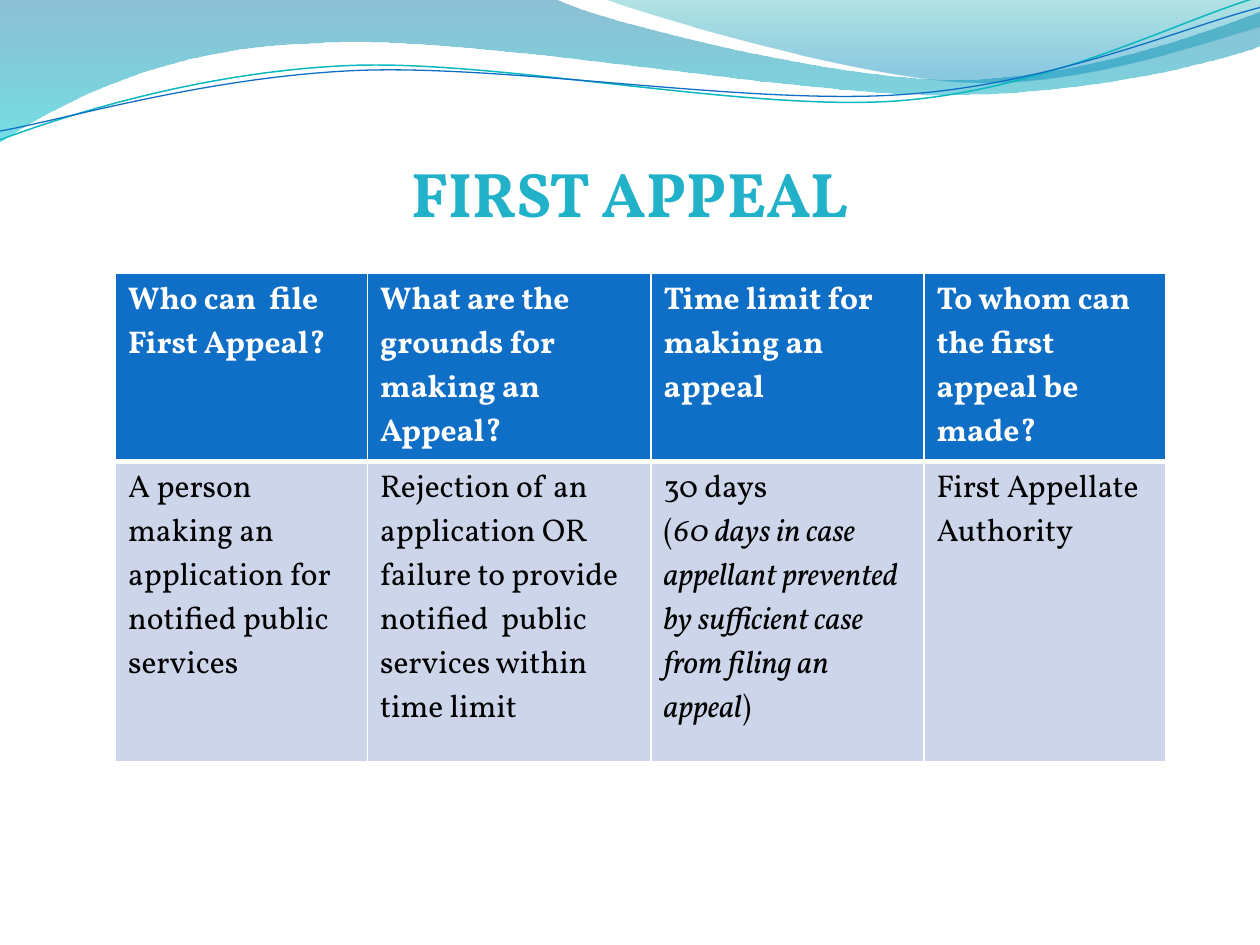
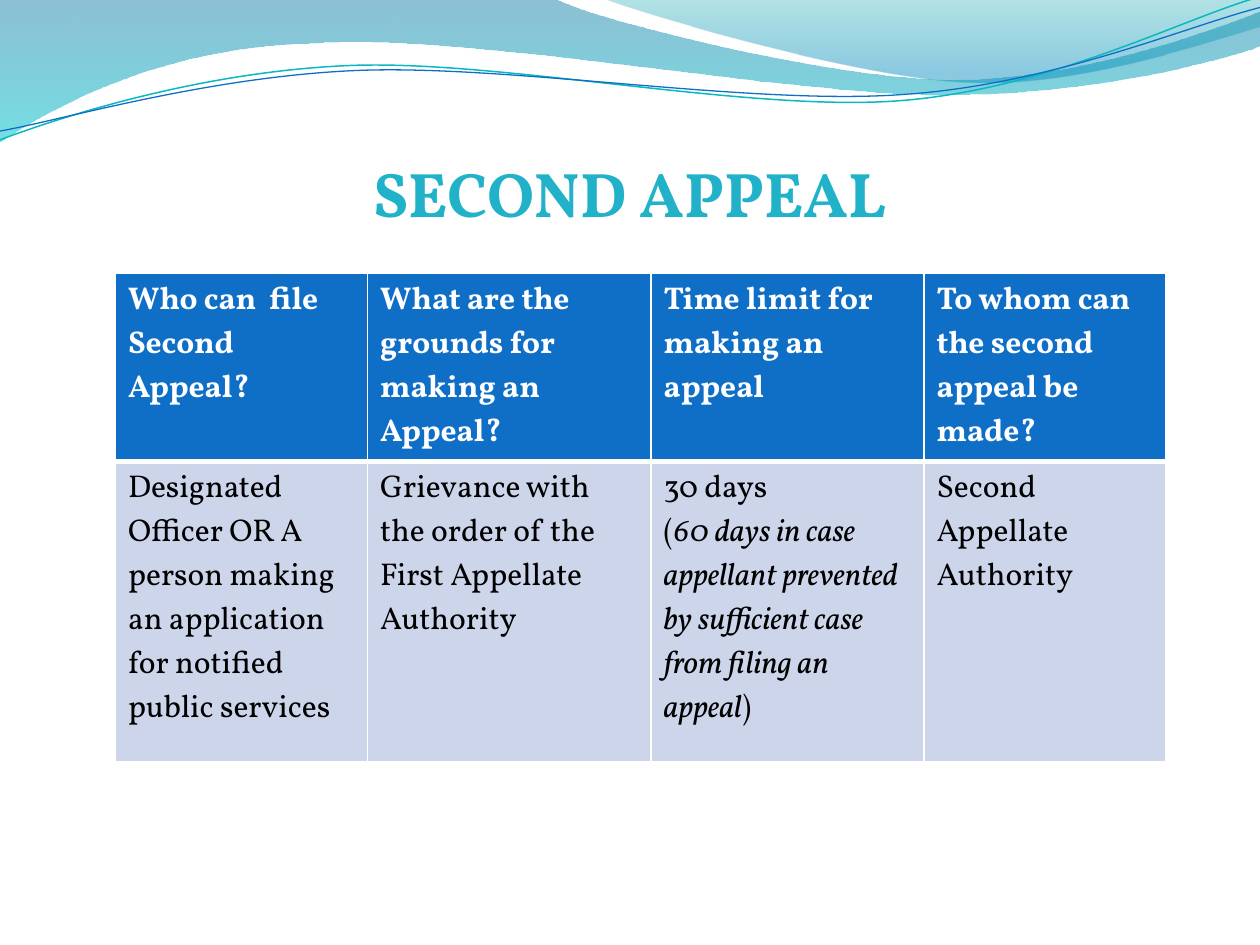
from math import cos, radians, sin

from lxml import etree
from pptx import Presentation
from pptx.dml.color import RGBColor
from pptx.enum.text import MSO_ANCHOR, MSO_AUTO_SIZE, PP_ALIGN
from pptx.oxml.ns import qn
from pptx.util import Inches, Pt

CENTER = PP_ALIGN.CENTER
BOTTOM = MSO_ANCHOR.BOTTOM
NO_AUTOFIT = MSO_AUTO_SIZE.NONE
TITLE_ONLY = 5
FONT = "Vollkorn"
COLORS = {
    "white": "FFFFFF", "black": "000000", "title": "21B2C9",
    "header": "0F6FC6", "body": "CCD5EA", "teal_line": "0AB8BF",
    "deep_blue": "0074A1", "aqua": "00C6CF", "green": "00A1A9", "sky": "008BBF",
}

PAGE_COLUMNS = 120
TITLE_BOX = (6, 9.2, 108, 12.75)
TABLE_BOX = (11, 26, 100, 46)
TABLE_COLUMNS = (24, 27, 26, 23)
TABLE_ROWS = (17.4, 28.6)

CURVE_TILT = 2.7
WIDE_BAND = [
    (0, 0), (4.4, -0.01), (4.76, 0.17, 6.64, 0.63, 7.58, 0.63),
    (8.53, 0.63, 9.58, 0.26, 10, 0.09), (10.01, 0.36),
    (9.83, 0.44, 8.7, 0.76, 7.46, 0.75), (6.22, 0.75, 3.82, 0.28, 2.57, 0.34),
    (1.29, 0.36, 0.46, 0.83, -0.01, 1.13),
]
RIGHT_BAND = [
    (4.79, -0.01), (5.09, 0.11, 6.82, 0.62, 7.69, 0.65),
    (8.56, 0.69, 9.61, 0.32, 10, 0.21), (10, 0),
]
TEAL_CURVE = [
    (0, 1.11), (0.48, 0.93, 1.58, 0.57, 2.77, 0.52),
    (3.95, 0.47, 5.93, 0.89, 7.13, 0.8), (8.33, 0.71, 9.38, 0.15, 9.98, -0.02),
]
BLUE_CURVE = [
    (0, 1.04), (0.47, 0.96, 1.64, 0.61, 2.83, 0.56),
    (4.03, 0.51, 5.97, 0.84, 7.17, 0.75), (8.36, 0.67, 9.41, 0.21, 10, 0.06),
]

TIME_LIMIT = [
    [("30 days", False)],
    [("(", False),
     ("60 days in case appellant prevented by sufficient case from filing an appeal", True),
     (")", False)],
]
APPEALS = [
    ("First", "A person making an application for notified public services",
     "Rejection of an application OR  failure to provide notified  public services "
     "within time limit"),
    ("Second",
     "Designated Officer OR A person making an application for notified public services",
     "Grievance with the order of the First Appellate Authority"),
]


def color(name):
    """Return the named colour as an RGB value."""
    return RGBColor.from_string(COLORS[name])


def write(para, text, size=18, fill="black", bold=False, italic=False):
    """Add a formatted span of text to a paragraph."""
    span = para.add_run()
    span.text = text
    font = span.font
    font.name, font.size, font.bold, font.italic = FONT, Pt(size), bold, italic
    font.color.rgb = color(fill)


def turn(point, center, degrees):
    """Turn a point clockwise around a centre."""
    angle = radians(degrees)
    x, y = point[0] - center[0], point[1] - center[1]
    return (center[0] + x * cos(angle) - y * sin(angle),
            center[1] + x * sin(angle) + y * cos(angle))


def bend(shape, outline):
    """Merge the lines that stand for a curve's control points into cubic curves."""
    lines = iter(list(shape.element.iter(qn("a:lnTo"))))
    for segment in outline[1:]:
        group = [next(lines) for _ in range(len(segment) // 2)]
        if len(group) == 3:
            curve = etree.Element(qn("a:cubicBezTo"))
            group[0].addprevious(curve)
            for line in group:
                curve.append(line[0])
                line.getparent().remove(line)


def draw_outline(page, width, outline, close, tilt=0, center=(0, 0)):
    """Draw an outline whose coordinates are tenths of the width."""
    points = [segment[i:i + 2] for segment in outline for i in range(0, len(segment), 2)]
    scaled = [tuple(round(value * width / 10) for value in turn(point, center, tilt))
              for point in points]
    builder = page.shapes.build_freeform(*scaled[0])
    builder.add_line_segments(scaled[1:], close=close)
    shape = builder.convert_to_shape()
    bend(shape, outline)
    shape.rotation = -tilt
    shape.shadow.inherit = False
    return shape


def draw_band(page, width, outline, stops):
    """Draw a translucent band with a vertical gradient."""
    band = draw_outline(page, width, outline, True)
    band.line.fill.background()
    band.fill.gradient()
    band.fill.gradient_angle = 270
    for stop, (position, name, _) in zip(band.fill.gradient_stops, stops):
        stop.position = position
        stop.color.rgb = color(name)
    for tint, (_, _, opacity) in zip(band.element.iter(qn("a:srgbClr")), stops):
        etree.SubElement(tint, qn("a:alpha")).set("val", str(opacity * 1000))
    return band


def draw_curve(page, width, outline, name, weight, center):
    """Draw a thin open curve, tilted around its centre."""
    curve = draw_outline(page, width, outline, False, CURVE_TILT, center)
    curve.fill.background()
    curve.line.color.rgb = color(name)
    curve.line.width = Pt(weight)
    return curve


def add_waves(page, width):
    """Draw the wave header once and move it to the layout shared by the slides."""
    waves = [
        draw_band(page, width, WIDE_BAND, [(0, "deep_blue", 45), (1, "aqua", 55)]),
        draw_band(page, width, RIGHT_BAND, [(0, "green", 30), (0.8, "sky", 45)]),
        draw_curve(page, width, TEAL_CURVE, "teal_line", 0.85, (4.99, 0.57)),
        draw_curve(page, width, BLUE_CURVE, "header", 0.75, (5, 0.59)),
    ]
    for number, wave in enumerate(waves):
        wave.element.nvSpPr.cNvPr.set("id", str(100 + number))
        page.slide_layout.shapes.element.insert(2 + number, wave.element)


def add_title(page, box, text):
    """Place and format the title placeholder."""
    title = page.shapes.title
    title.left, title.top, title.width, title.height = box
    frame = title.text_frame
    frame.auto_size = NO_AUTOFIT
    frame.vertical_anchor = BOTTOM
    frame.margin_left = frame.margin_right = frame.margin_bottom = 0
    frame.margin_top = Inches(0.05)
    para = frame.paragraphs[0]
    para.alignment = CENTER
    write(para, text, size=36, fill="title", bold=True)


def set_borders(cell, top, bottom):
    """Give a cell white borders with the given top and bottom weights."""
    properties = cell._tc.get_or_add_tcPr()
    for side, weight in (("L", 1), ("R", 1), ("T", top), ("B", bottom)):
        line = etree.SubElement(properties, qn(f"a:ln{side}"), w=str(Pt(weight)))
        fill = etree.SubElement(line, qn("a:solidFill"))
        etree.SubElement(fill, qn("a:srgbClr"), val=COLORS["white"])


def fill_cell(cell, paragraphs, is_header):
    """Fill a cell with paragraphs of (text, italic) spans."""
    set_borders(cell, *((1, 3) if is_header else (3, 1)))
    cell.fill.solid()
    cell.fill.fore_color.rgb = color("header" if is_header else "body")
    frame = cell.text_frame
    for number, spans in enumerate(paragraphs):
        para = frame.add_paragraph() if number else frame.paragraphs[0]
        for text, italic in spans:
            write(para, text, fill="white" if is_header else "black",
                  bold=is_header, italic=italic)


def add_appeal_table(page, box, rows):
    """Add the table of questions and answers, sharing out the box by the grid."""
    table = page.shapes.add_table(len(rows), len(rows[0]), *box).table
    table.horz_banding = False
    for column, share in zip(table.columns, TABLE_COLUMNS):
        column.width = round(box[2] * share / sum(TABLE_COLUMNS))
    for row, share in zip(table.rows, TABLE_ROWS):
        row.height = round(box[3] * share / sum(TABLE_ROWS))
    for row_number, texts in enumerate(rows):
        for column_number, content in enumerate(texts):
            paragraphs = [[(content, False)]] if isinstance(content, str) else content
            fill_cell(table.cell(row_number, column_number), paragraphs, row_number == 0)


def add_appeal_page(page, unit, rank, applicant, grounds):
    """Fill one slide with the title and table of an appeal."""
    title_box, table_box = (
        [round(length * unit) for length in box] for box in (TITLE_BOX, TABLE_BOX))
    add_title(page, title_box, f"{rank.upper()} APPEAL")
    add_appeal_table(page, table_box, [
        [f"Who can  file {rank} Appeal?", "What are the grounds for making an Appeal?",
         "Time limit for making an appeal",
         f"To whom can the {rank.lower()} appeal be made?"],
        [applicant, grounds, TIME_LIMIT, f"{rank} Appellate Authority"],
    ])


def main():
    """Build and save the presentation."""
    deck = Presentation()
    deck.slide_width, deck.slide_height = Inches(10), Inches(7.5)
    layout = deck.slide_layouts[TITLE_ONLY]
    pages = [deck.slides.add_slide(layout) for _ in APPEALS]
    add_waves(pages[0], deck.slide_width)
    for page, appeal in zip(pages, APPEALS):
        add_appeal_page(page, deck.slide_width / PAGE_COLUMNS, *appeal)
    deck.save("out.pptx")


if __name__ == "__main__":
    main()
